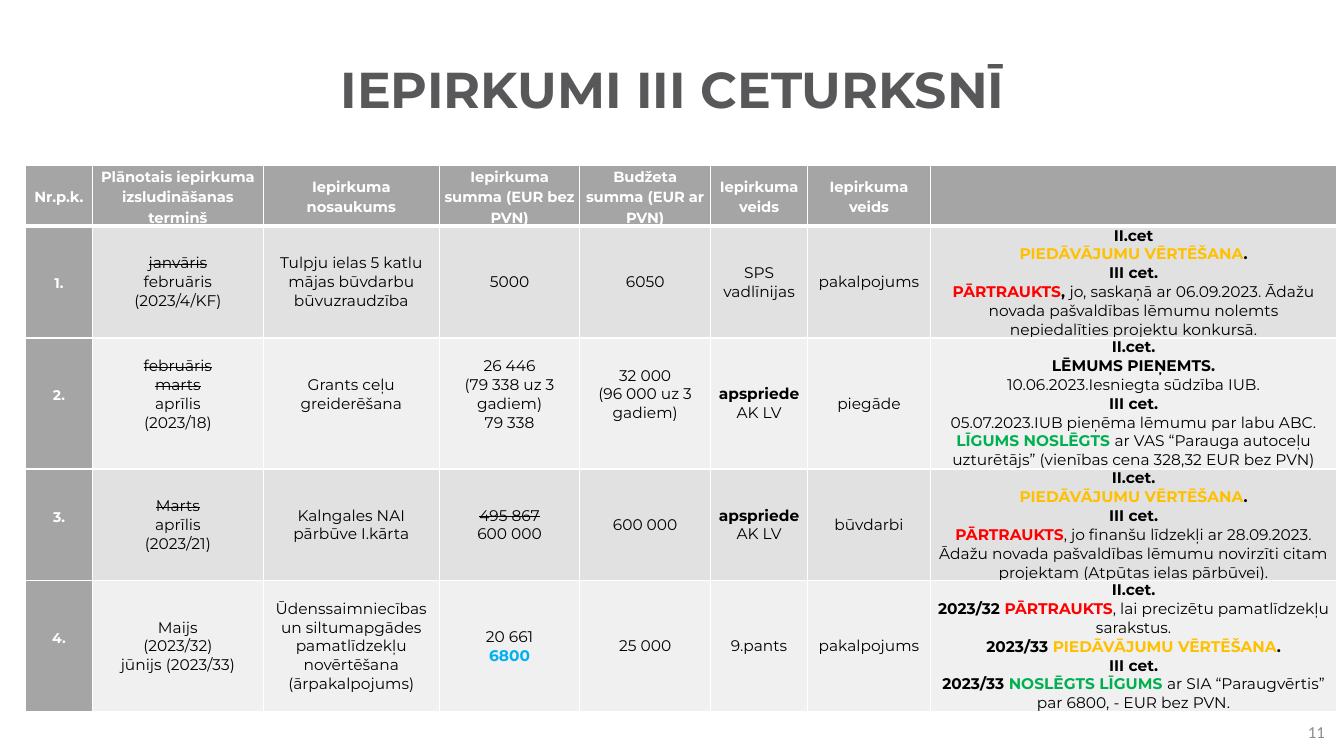
from lxml import etree
from pptx import Presentation
from pptx.dml.color import RGBColor
from pptx.enum.text import MSO_ANCHOR, PP_ALIGN
from pptx.oxml.ns import qn
from pptx.util import Inches, Pt

MIDDLE = MSO_ANCHOR.MIDDLE
CENTER, RIGHT = PP_ALIGN.CENTER, PP_ALIGN.RIGHT
WHITE, BLACK, GREY = "FFFFFF", "000000", "A5A5A5"
BAND_FILLS = ("E1E1E1", "F0F0F0")
COLUMN_WIDTHS = (0.67, 1.69, 1.75, 1.39, 1.3, 0.96, 1.22, 4.03)
ROW_HEIGHTS = (0.6, 1.11, 1.3, 1.11, 1.3)
LINE_GAP = 0.18

BOLD = {"bold": True}
STRUCK = {"strike": True}
RED = {"bold": True, "color": "FF0000"}
AMBER = {"bold": True, "color": "FFC000"}
GREEN = {"bold": True, "color": "00B050"}
BLUE = {"bold": True, "color": "00B0F0"}

HEADERS = (
    "Nr.p.k.", "Plānotais iepirkuma izsludināšanas termiņš", "Iepirkuma nosaukums",
    "Iepirkuma summa (EUR bez PVN)", "Budžeta summa (EUR ar PVN)",
    "Iepirkuma veids", "Iepirkuma veids", "",
)

# A cell is a list of paragraphs; a paragraph is a string or a list of (text, format) spans.
SECOND_QUARTER = [("II.cet.", BOLD)]
THIRD_QUARTER = [("III cet.", BOLD)]
EVALUATION = [("PIEDĀVĀJUMU VĒRTĒŠANA", AMBER), (".", BOLD)]
MEETING = [[("apspriede", BOLD)], "AK LV"]

PROCUREMENTS = (
    (
        [[("janvāris", STRUCK)], "februāris", "(2023/4/KF)"],
        ["Tulpju ielas 5 katlu mājas būvdarbu būvuzraudzība"],
        ["5000"], ["6050"], ["SPS vadlīnijas"], ["pakalpojums"],
        [
            [("II.cet", BOLD)], EVALUATION, THIRD_QUARTER,
            [("PĀRTRAUKTS", RED), (", ", BOLD),
             ("jo, saskaņā ar 06.09.2023. Ādažu novada pašvaldības lēmumu nolemts "
              "nepiedalīties projektu konkursā.", {})],
        ],
    ),
    (
        [[("februāris", STRUCK)], [("marts", STRUCK)], "aprīlis", "(2023/18)"],
        ["Grants ceļu greiderēšana"],
        ["26 446", "(79 338 uz 3 gadiem)", "79 338"],
        ["32 000", "(96 000 uz 3 gadiem)"], MEETING, ["piegāde"],
        [
            SECOND_QUARTER, [("LĒMUMS PIEŅEMTS.", BOLD)],
            "10.06.2023.Iesniegta sūdzība IUB.", THIRD_QUARTER,
            "05.07.2023.IUB pieņēma lēmumu par labu ABC.",
            [("LĪGUMS NOSLĒGTS ", GREEN),
             ("ar VAS “Parauga autoceļu uzturētājs” (vienības cena 328,32 EUR bez PVN)", {})],
        ],
    ),
    (
        [[("Marts", STRUCK)], "aprīlis", "(2023/21)"],
        ["Kalngales NAI pārbūve I.kārta"],
        [[("495 867", STRUCK)], "600 000"], ["600 000"], MEETING, ["būvdarbi"],
        [
            SECOND_QUARTER, EVALUATION, THIRD_QUARTER,
            [("PĀRTRAUKTS", RED),
             (", jo finanšu līdzekļi ar 28.09.2023. Ādažu novada pašvaldības lēmumu "
              "novirzīti citam projektam (Atpūtas ielas pārbūvei).", {})],
        ],
    ),
    (
        ["Maijs", "(2023/32)", "jūnijs (2023/33)"],
        ["Ūdenssaimniecības un siltumapgādes pamatlīdzekļu novērtēšana (ārpakalpojums)"],
        ["20 661", [("6800", BLUE)]], ["25 000"], ["9.pants"], ["pakalpojums"],
        [
            SECOND_QUARTER,
            [("2023/32 ", BOLD), ("PĀRTRAUKTS", RED),
             (", lai precizētu pamatlīdzekļu sarakstus.", {})],
            [("2023/33 ", BOLD), *EVALUATION], THIRD_QUARTER,
            [("2023/33 ", BOLD), ("NOSLĒGTS LĪGUMS ", GREEN),
             ("ar SIA “Paraugvērtis” par 6800, - EUR bez PVN.", {})],
        ],
    ),
)


def rgb(color):
    return RGBColor.from_string(color)


def add_span(para, text, size=11, color=BLACK, bold=False, strike=False, font="Montserrat"):
    span = para.add_run()
    span.text = text
    span.font.name = font
    span.font.size = Pt(size)
    span.font.bold = bold
    span.font.color.rgb = rgb(color)
    if strike:
        span.font._element.set("strike", "sngStrike")


def add_text(page, text, left, top, width, height, align, line_spacing=1.0, **span_format):
    frame = page.shapes.add_textbox(
        Inches(left), Inches(top), Inches(width), Inches(height)).text_frame
    frame.word_wrap = True
    frame.vertical_anchor = MIDDLE
    para = frame.paragraphs[0]
    para.alignment = align
    para.line_spacing = line_spacing
    add_span(para, text, **span_format)


def set_borders(cell, top=1, bottom=1):
    """Draw white borders, with widths in points; they must precede the fill in the XML."""
    properties = cell._tc.get_or_add_tcPr()
    widths = {"a:lnL": 1, "a:lnR": 1, "a:lnT": top, "a:lnB": bottom}
    for position, (tag, width) in enumerate(widths.items()):
        line = etree.Element(qn(tag), w=str(Pt(width)))
        fill = etree.SubElement(line, qn("a:solidFill"))
        etree.SubElement(fill, qn("a:srgbClr"), val=WHITE)
        properties.insert(position, line)


def format_cell(cell, fill, side=0.07, top=0, bottom=0):
    cell.fill.solid()
    cell.fill.fore_color.rgb = rgb(fill)
    cell.vertical_anchor = MIDDLE
    cell.margin_left = cell.margin_right = Inches(side)
    cell.margin_top, cell.margin_bottom = Inches(top), Inches(bottom)


def fill_label(cell, text, size, **margins):
    """Write white bold text in a grey heading cell."""
    format_cell(cell, GREY, **margins)
    if text:
        para = cell.text_frame.paragraphs[0]
        para.alignment = CENTER
        para.line_spacing = 1.15
        para.space_after = Pt(8)
        add_span(para, text, size=size, color=WHITE, bold=True)


def fill_body(cell, paragraphs, fill, bottom=0):
    format_cell(cell, fill, bottom=bottom)
    frame = cell.text_frame
    for index, content in enumerate(paragraphs):
        para = frame.add_paragraph() if index else frame.paragraphs[0]
        para.alignment = CENTER
        spans = [(content, {})] if isinstance(content, str) else content
        for text, span_format in spans:
            add_span(para, text, **span_format)


def add_procurement_table(page):
    table = page.shapes.add_table(
        len(ROW_HEIGHTS), len(COLUMN_WIDTHS), Inches(0.25), Inches(1.64),
        Inches(sum(COLUMN_WIDTHS)), Inches(sum(ROW_HEIGHTS))).table
    table.horz_banding = False
    for column, width in zip(table.columns, COLUMN_WIDTHS):
        column.width = Inches(width)
    for row, height in zip(table.rows, ROW_HEIGHTS):
        row.height = Inches(height)

    for column, header in enumerate(HEADERS):
        cell = table.cell(0, column)
        fill_label(cell, header, 10.5, side=0.03)
        set_borders(cell, bottom=3)

    for row, contents in enumerate(PROCUREMENTS, start=1):
        number_margins = {"side": 0.03} if row == 1 else {"top": 0.05, "bottom": 0.05 + LINE_GAP}
        fill_label(table.cell(row, 0), f"{row}.", 10, **number_margins)
        for column, paragraphs in enumerate(contents, start=1):
            raised = row == 2 and column <= 4
            fill_body(table.cell(row, column), paragraphs, BAND_FILLS[(row - 1) % 2],
                      bottom=LINE_GAP if raised else 0)
        for cell in table.rows[row].cells:
            set_borders(cell, top=3 if row == 1 else 1)


def main():
    deck = Presentation()
    deck.slide_width, deck.slide_height = Inches(13.33), Inches(7.5)
    page = deck.slides.add_slide(deck.slide_layouts[6])
    add_text(page, "IEPIRKUMI III CETURKSNĪ", 0.92, 0.19, 11.5, 1.45, CENTER,
             line_spacing=0.9, size=36, color="58585B", bold=True)
    add_procurement_table(page)
    add_text(page, "11", 10.24, 7.06, 3, 0.4, RIGHT, size=12, color="8C8C8C", font="Calibri")
    deck.save("out.pptx")


if __name__ == "__main__":
    main()
